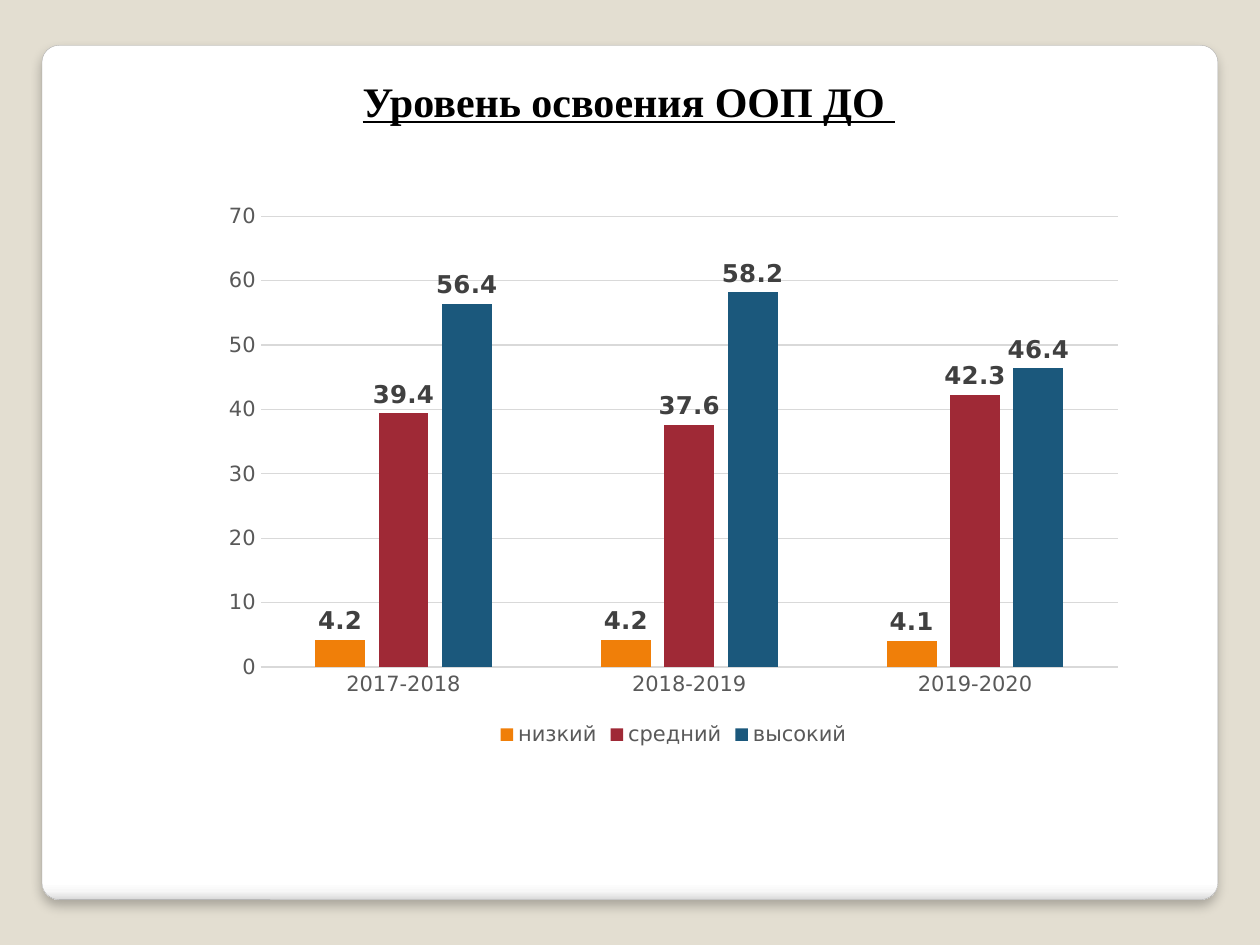
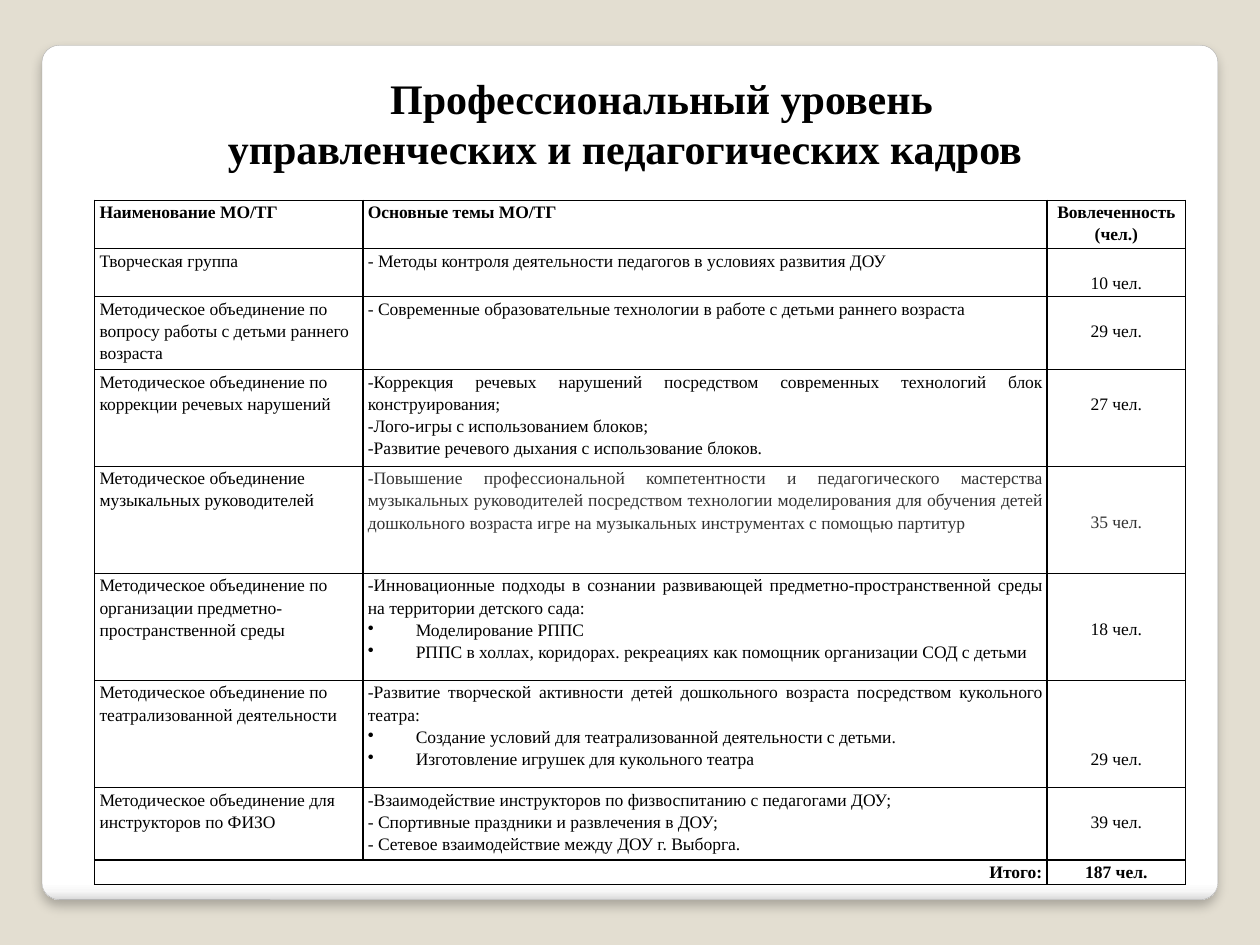
from dataclasses import dataclass
from typing import NamedTuple

from lxml import etree
from pptx import Presentation
from pptx.chart.data import CategoryChartData
from pptx.dml.color import RGBColor
from pptx.enum.chart import XL_CHART_TYPE as ChartType
from pptx.enum.chart import XL_LABEL_POSITION as LabelPosition
from pptx.enum.chart import XL_LEGEND_POSITION as LegendPosition
from pptx.enum.chart import XL_TICK_MARK as TickMark
from pptx.enum.shapes import MSO_SHAPE as Preset
from pptx.enum.text import MSO_ANCHOR as Anchor
from pptx.enum.text import PP_ALIGN as Align
from pptx.oxml import parse_xml
from pptx.oxml.ns import nsdecls, qn
from pptx.util import Emu, Inches, Pt

GRID_STEP = Inches(0.1)
GRID_COLUMNS, GRID_ROWS = 100, 75
SERIF, SANS = "Times New Roman", "DejaVu Sans"
BLACK, WHITE, DARK_GREY = "000000", "FFFFFF", "333333"
BACKDROP, CARD_EDGE = "E3DED1", "A4A4A4"
AXIS_TEXT, LABEL_TEXT, GRID_LINE = "595959", "404040", "D9D9D9"
CARD_STOPS = [(0, WHITE), (98, WHITE), (99, "F7F7F7"), (100, "DADADA")]
LINE_HEIGHT = 1.75
LINE_SPACING = 1.15
BULLET_INDENT = 3.8


class Area(NamedTuple):
    left: float
    top: float
    width: float
    height: float

    def place(self) -> tuple:
        return tuple(grid(side) for side in self)


class TitleLine(NamedTuple):
    text: str
    indent: float = 0


class Level(NamedTuple):
    name: str
    shares: tuple
    color: str


class Note(NamedTuple):
    text: str
    align: Align = Align.LEFT
    bold: bool = False
    color: str = BLACK
    bulleted: bool = False


@dataclass
class Circle:
    name: str
    topics: list
    people: int
    lines_above: int
    height: float
    tasks: tuple = ()
    color: str = BLACK


CARD = Area(3.33, 3.6, 93.33, 67.8)
YEARS = ["2017-2018", "2018-2019", "2019-2020"]
LEVELS = [
    Level("низкий", (4.2, 4.2, 4.1), "F07F09"),
    Level("средний", (39.4, 37.6, 42.3), "9F2936"),
    Level("высокий", (56.4, 58.2, 46.4), "1B587C"),
]
COLUMN_WIDTHS = [21.3, 54.3, 11]
HEADER_HEIGHT, TOTAL_HEIGHT = 3.8, 1.9
HEADERS = [
    Note("Наименование МО/ТГ", Align.LEFT, True),
    Note("Основные темы МО/ТГ", Align.JUSTIFY, True),
    Note("Вовлеченность (чел.)", Align.CENTER, True),
]
CIRCLES = [
    Circle("Творческая группа",
           ["- Методы контроля деятельности педагогов в условиях развития ДОУ"], 10, 1, 3.8),
    Circle("Методическое объединение по вопросу работы с детьми раннего возраста",
           ["- Современные образовательные технологии в работе с детьми раннего возраста"],
           29, 1, 5.8),
    Circle("Методическое объединение по коррекции речевых нарушений",
           ["-Коррекция речевых нарушений посредством современных технологий "
            "блок конструирования;",
            "-Лого-игры с использованием блоков;",
            "-Развитие речевого дыхания с использование блоков."], 27, 1, 7.6),
    Circle("Методическое объединение музыкальных руководителей",
           ["-Повышение профессиональной компетентности и педагогического мастерства "
            "музыкальных руководителей посредством технологии моделирования для обучения "
            "детей дошкольного возраста игре на музыкальных инструментах с помощью партитур"],
           35, 2, 8.5, color=DARK_GREY),
    Circle("Методическое объединение по организации предметно-пространственной среды",
           ["-Инновационные подходы в сознании развивающей предметно-пространственной "
            "среды на территории детского сада:"], 18, 2, 8.5,
           ("Моделирование РППС",
            "РППС в холлах, коридорах. рекреациях как помощник организации СОД с детьми")),
    Circle("Методическое объединение по театрализованной деятельности",
           ["-Развитие творческой активности детей дошкольного возраста посредством "
            "кукольного театра:"], 29, 3, 8.5,
           ("Создание условий для театрализованной деятельности с детьми.",
            "Изготовление игрушек для кукольного театра")),
    Circle("Методическое объединение для инструкторов по ФИЗО",
           ["-Взаимодействие инструкторов по физвоспитанию с педагогами ДОУ;",
            "- Спортивные праздники и развлечения в ДОУ;",
            "- Сетевое взаимодействие между ДОУ г. Выборга."], 39, 1, 5.7),
]


def grid(steps: float) -> Emu:
    return Emu(round(steps * GRID_STEP))


def rgb(color: str) -> RGBColor:
    return RGBColor.from_string(color)


def style_font(font, face: str, size: float, color: str, bold: bool = False) -> None:
    font.name, font.size, font.bold = face, Pt(size), bold
    font.color.rgb = rgb(color)


def indent_paragraph(paragraph, margin: float, first_line: float = 0) -> None:
    properties = paragraph._p.get_or_add_pPr()
    properties.set("marL", str(grid(margin)))
    properties.set("indent", str(grid(first_line)))


def add_card(slide) -> None:
    card = slide.shapes.add_shape(Preset.ROUNDED_RECTANGLE, *CARD.place())
    card.adjustments[0] = 0.02
    card.line.color.rgb = rgb(CARD_EDGE)
    card.line.width = Pt(0.16)
    card.fill.background()
    properties = card._element.spPr
    stops = "".join(
        f'<a:gs pos="{share * 1000}"><a:srgbClr val="{color}"/></a:gs>'
        for share, color in CARD_STOPS
    )
    properties.replace(properties.find(qn("a:noFill")), parse_xml(
        f'<a:gradFill {nsdecls("a")} rotWithShape="1"><a:gsLst>{stops}</a:gsLst>'
        '<a:lin ang="5400000" scaled="0"/></a:gradFill>'))
    properties.append(parse_xml(
        f'<a:effectLst {nsdecls("a")}><a:outerShdw blurRad="{Pt(6)}" dist="{Pt(4)}" '
        'dir="5400000" algn="t" rotWithShape="0">'
        f'<a:srgbClr val="{BLACK}"><a:alpha val="25000"/></a:srgbClr>'
        '</a:outerShdw></a:effectLst>'))


def add_carded_slide(deck):
    slide = deck.slides.add_slide(deck.slide_layouts[6])
    slide.background.fill.solid()
    slide.background.fill.fore_color.rgb = rgb(BACKDROP)
    add_card(slide)
    return slide


def add_title(slide, area: Area, lines: list, align: Align, underline: bool = False) -> None:
    frame = slide.shapes.add_textbox(*area.place()).text_frame
    frame.word_wrap = True
    frame.vertical_anchor = Anchor.MIDDLE
    for index, line in enumerate(lines):
        paragraph = frame.add_paragraph() if index else frame.paragraphs[0]
        paragraph.text = line.text
        paragraph.alignment = align
        style_font(paragraph.font, SERIF, 24, BLACK, True)
        paragraph.font.underline = underline
        indent_paragraph(paragraph, line.indent)


def add_level_chart(slide, area: Area) -> None:
    data = CategoryChartData()
    data.categories = YEARS
    for level in LEVELS:
        data.add_series(level.name, level.shares)
    chart = slide.shapes.add_chart(ChartType.COLUMN_CLUSTERED, *area.place(), data).chart
    style_font(chart.font, SANS, 10, BLACK)
    chart.has_title = False
    chart.has_legend = True
    chart.legend.position = LegendPosition.BOTTOM
    chart.legend.include_in_layout = False
    style_font(chart.legend.font, SANS, 12, AXIS_TEXT)

    for axis in (chart.category_axis, chart.value_axis):
        axis.major_tick_mark = axis.minor_tick_mark = TickMark.NONE
        style_font(axis.tick_labels.font, SANS, 12, AXIS_TEXT)
    chart.value_axis.format.line.fill.background()
    chart.value_axis.minimum_scale, chart.value_axis.maximum_scale = 0, 70
    chart.value_axis.major_unit = 10
    for rule in (chart.category_axis.format.line, chart.value_axis.major_gridlines.format.line):
        rule.color.rgb = rgb(GRID_LINE)
        rule.width = Pt(0.75)

    plot = chart.plots[0]
    plot.gap_width, plot.overlap, plot.vary_by_categories = 219, -27, False
    for series, level in zip(plot.series, LEVELS):
        series.format.fill.solid()
        series.format.fill.fore_color.rgb = rgb(level.color)
        labels = series.data_labels
        labels.show_value = True
        labels.position = LabelPosition.OUTSIDE_END
        style_font(labels.font, SANS, 14, LABEL_TEXT, True)


def fill_cell(cell, notes: list, lines_above: int = 0) -> None:
    cell.margin_left = cell.margin_right = grid(0.4)
    cell.margin_top, cell.margin_bottom = grid(lines_above * LINE_HEIGHT), 0
    for index, note in enumerate(notes):
        frame = cell.text_frame
        paragraph = frame.add_paragraph() if index else frame.paragraphs[0]
        paragraph.text = note.text
        paragraph.alignment = note.align
        paragraph.line_spacing = LINE_SPACING
        style_font(paragraph.font, SERIF, 10, note.color, note.bold)
        if note.bulleted:
            indent_paragraph(paragraph, BULLET_INDENT, -BULLET_INDENT)
            bullet = etree.Element(qn("a:buChar"), char="•")
            paragraph._p.pPr.find(qn("a:defRPr")).addprevious(bullet)


def frame_cell(cell) -> None:
    cell.fill.background()
    properties = cell._tc.get_or_add_tcPr()
    for index, side in enumerate("LRTB"):
        properties.insert(index, parse_xml(
            f'<a:ln{side} {nsdecls("a")} w="{Pt(1)}"><a:solidFill>'
            f'<a:srgbClr val="{BLACK}"/></a:solidFill></a:ln{side}>'))


def add_circle_table(slide, left: float, top: float) -> None:
    heights = [HEADER_HEIGHT, *(circle.height for circle in CIRCLES), TOTAL_HEIGHT]
    area = Area(left, top, sum(COLUMN_WIDTHS), sum(heights))
    table = slide.shapes.add_table(len(heights), len(COLUMN_WIDTHS), *area.place()).table
    table.first_row = table.horz_banding = False
    for column, width in zip(table.columns, COLUMN_WIDTHS):
        column.width = grid(width)
    for row, height in zip(table.rows, heights):
        row.height = grid(height)

    for column, header in enumerate(HEADERS):
        fill_cell(table.cell(0, column), [header])
    for row, circle in enumerate(CIRCLES, 1):
        topics = [Note(text, Align.JUSTIFY, color=circle.color) for text in circle.topics]
        tasks = [Note(text, Align.JUSTIFY, bulleted=True) for text in circle.tasks]
        people = Note(f"{circle.people} чел.", Align.CENTER, color=circle.color)
        fill_cell(table.cell(row, 0), [Note(circle.name)])
        fill_cell(table.cell(row, 1), topics + tasks)
        fill_cell(table.cell(row, 2), [people], circle.lines_above)

    last = len(heights) - 1
    total = sum(circle.people for circle in CIRCLES)
    table.cell(last, 0).merge(table.cell(last, 1))
    fill_cell(table.cell(last, 0), [Note("Итого:", Align.RIGHT, True)])
    fill_cell(table.cell(last, 2), [Note(f"{total} чел.", Align.CENTER, True)])
    for cell in table.iter_cells():
        frame_cell(cell)


def main() -> None:
    deck = Presentation()
    deck.slide_width, deck.slide_height = grid(GRID_COLUMNS), grid(GRID_ROWS)

    results = add_carded_slide(deck)
    add_title(results, Area(19.5, 5.5, 58.6, 5),
              [TitleLine("Уровень освоения ООП ДО ", 8.3)], Align.LEFT, underline=True)
    add_level_chart(results, Area(16.7, 15.3, 73.5, 44.4))

    staff = add_carded_slide(deck)
    add_title(staff, Area(6.7, 5.2, 85.8, 9.1),
              [TitleLine("Профессиональный уровень", 5.8),
               TitleLine("управленческих и педагогических кадров")], Align.CENTER)
    add_circle_table(staff, 7.5, 15.9)

    deck.save("out.pptx")


if __name__ == "__main__":
    main()
